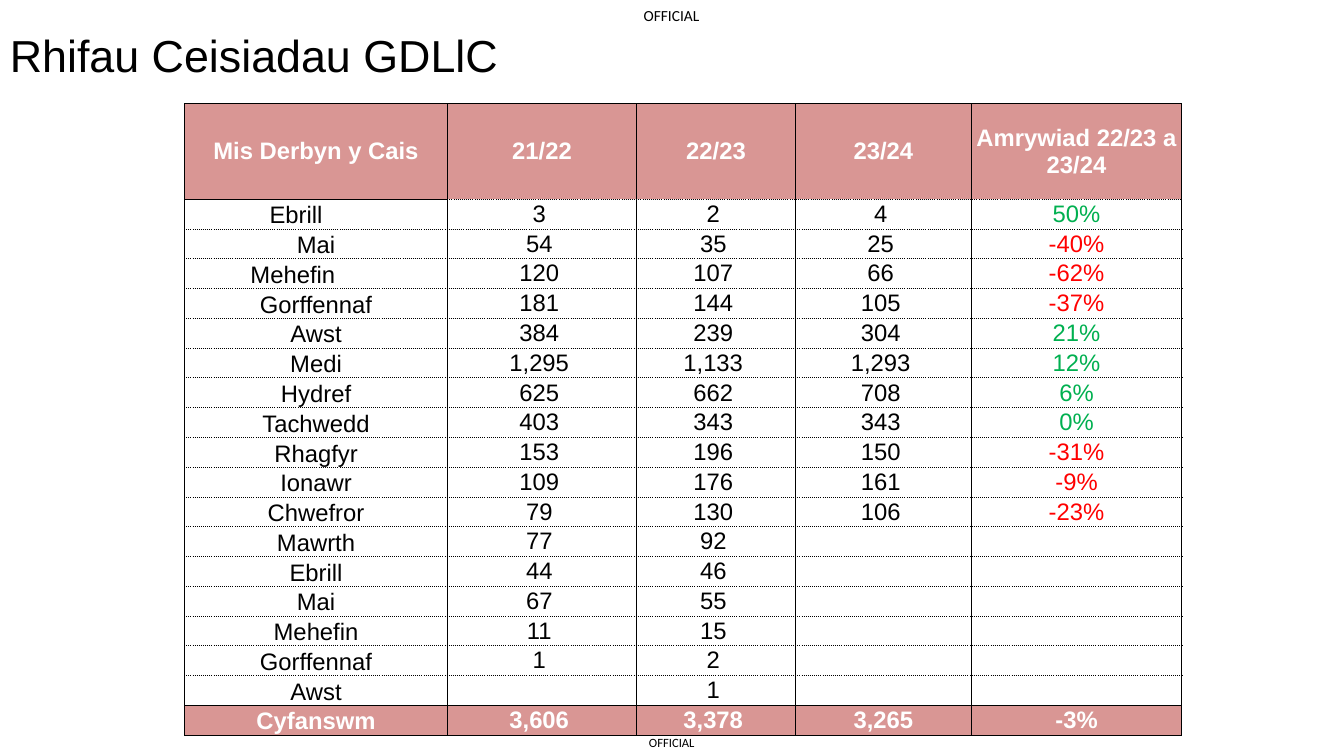
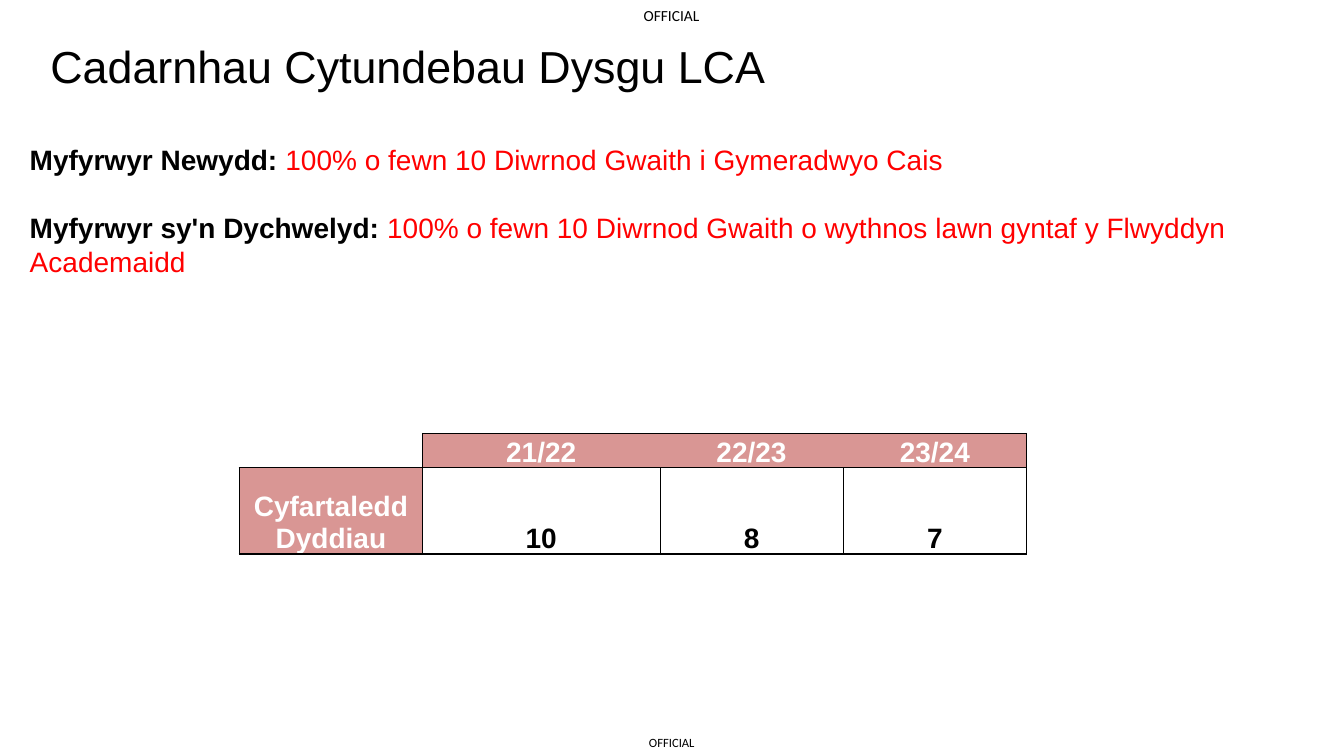
from dataclasses import dataclass, field

from lxml import etree
from pptx import Presentation
from pptx.dml.color import RGBColor
from pptx.enum import text
from pptx.oxml import ns
from pptx.util import Cm, Pt

COLOURS = {
    "black": "000000",
    "white": "FFFFFF",
    "rose": "D99694",
    "green": "00B050",
    "red": "FF0000",
}
BODY_FACE, MARKING_FACE = "Arial", "Calibri"
CENTRE, LEFT = text.PP_ALIGN.CENTER, text.PP_ALIGN.LEFT
MIDDLE, TOP, BOTTOM = (
    text.MSO_ANCHOR.MIDDLE, text.MSO_ANCHOR.TOP, text.MSO_ANCHOR.BOTTOM)
NUMBER_GAP = 0.17


@dataclass(frozen=True)
class Edge:
    width: float
    dash: str = "solid"


@dataclass(frozen=True)
class Span:
    words: str
    colour: str = "black"
    bold: bool = False


@dataclass(frozen=True)
class Cell:
    words: str = ""
    colour: str = "black"
    bold: bool = False
    fill: str = ""
    anchor: text.MSO_ANCHOR = MIDDLE
    right: float = 0.03
    edges: dict[str, Edge] = field(default_factory=dict)


@dataclass(frozen=True)
class Marking:
    left: float
    top: float
    width: float
    height: float
    size: int


MARKINGS = (
    Marking(16, 18.36, 1.86, 0.69, 9),
    Marking(15.82, 0, 2.21, 0.79, 11),
)

THIN, DOTTED, FIRM = Edge(0.5), Edge(0.5, "dot"), Edge(1)

YEARS = ("21/22", "22/23", "23/24")
MONTHS = (
    ("Ebrill", "3", "2", "4", "50%"),
    ("Mai", "54", "35", "25", "-40%"),
    ("Mehefin", "120", "107", "66", "-62%"),
    ("Gorffennaf", "181", "144", "105", "-37%"),
    ("Awst", "384", "239", "304", "21%"),
    ("Medi", "1,295", "1,133", "1,293", "12%"),
    ("Hydref", "625", "662", "708", "6%"),
    ("Tachwedd", "403", "343", "343", "0%"),
    ("Rhagfyr", "153", "196", "150", "-31%"),
    ("Ionawr", "109", "176", "161", "-9%"),
    ("Chwefror", "79", "130", "106", "-23%"),
    ("Mawrth", "77", "92", "", ""),
    ("Ebrill", "44", "46", "", ""),
    ("Mai", "67", "55", "", ""),
    ("Mehefin", "11", "15", "", ""),
    ("Gorffennaf", "1", "2", "", ""),
    ("Awst", "", "1", "", ""),
)
TOTALS = ("Cyfanswm", "3,606", "3,378", "3,265", "-3%")
MONTH_GAPS = {0: 1.04, 2: 1.2}


def rgb(name: str) -> RGBColor:
    return RGBColor.from_string(COLOURS[name])


def add_text(page, left: float, top: float, width: float, height: float,
             paras: list[list[Span]], size: float, face: str = BODY_FACE,
             align: text.PP_ALIGN = LEFT, anchor: text.MSO_ANCHOR = TOP,
             inset: bool = True, gap: float = 0) -> None:
    """Place paragraphs of spans, with a gap in points between paragraphs."""
    box = page.shapes.add_textbox(Cm(left), Cm(top), Cm(width), Cm(height))
    frame = box.text_frame
    frame.word_wrap = True
    frame.vertical_anchor = anchor
    if not inset:
        frame.margin_left = frame.margin_right = Cm(0)
        frame.margin_top = frame.margin_bottom = Cm(0)
    for index, spans in enumerate(paras):
        para = frame.add_paragraph() if index else frame.paragraphs[0]
        para.alignment = align
        if index:
            para.space_before = Pt(gap)
        para.font.size = Pt(size)
        para.font.name = face
        for span in spans:
            run = para.add_run()
            run.text = span.words
            run.font.bold = span.bold
            run.font.color.rgb = rgb(span.colour)


def add_page(deck, title: str, left: float, top: float):
    """Add a blank page with its security markings and title."""
    page = deck.slides.add_slide(deck.slide_layouts[6])
    for mark in MARKINGS:
        add_text(page, mark.left, mark.top, mark.width, mark.height,
                 [[Span("OFFICIAL")]], mark.size, MARKING_FACE,
                 CENTRE, MIDDLE, inset=False)
    add_text(page, left, top, 28, 1.63, [[Span(title)]], 32)
    return page


def draw_edges(cell, edges: dict[str, Edge]) -> None:
    properties = cell._tc.get_or_add_tcPr()
    for side in "LRTB":
        edge = edges.get(side)
        line = etree.SubElement(properties, ns.qn(f"a:ln{side}"))
        if edge is None:
            etree.SubElement(line, ns.qn("a:noFill"))
            continue
        line.set("w", str(Pt(edge.width)))
        paint = etree.SubElement(line, ns.qn("a:solidFill"))
        etree.SubElement(paint, ns.qn("a:srgbClr"), val=COLOURS["black"])
        etree.SubElement(line, ns.qn("a:prstDash"), val=edge.dash)


def fill_cell(target, cell: Cell, size: float) -> None:
    draw_edges(target, cell.edges)
    if cell.fill:
        target.fill.solid()
        target.fill.fore_color.rgb = rgb(cell.fill)
    else:
        target.fill.background()
    target.vertical_anchor = cell.anchor
    target.margin_left, target.margin_right = Cm(0.03), Cm(cell.right)
    target.margin_top = target.margin_bottom = Cm(0)
    para = target.text_frame.paragraphs[0]
    if cell.words:
        para.add_run().text = cell.words
    para.alignment = CENTRE
    para.font.size = Pt(size)
    para.font.name = BODY_FACE
    para.font.bold = cell.bold
    para.font.color.rgb = rgb(cell.colour)


def add_grid(page, left: float, top: float, widths: list[float],
             heights: list[float], rows: list[list[Cell]], size: float) -> None:
    table = page.shapes.add_table(
        len(heights), len(widths), Cm(left), Cm(top),
        Cm(sum(widths)), Cm(sum(heights))).table
    table.first_row = table.horz_banding = False
    for column, width in zip(table.columns, widths):
        column.width = Cm(width)
    for row, height, cells in zip(table.rows, heights, rows):
        row.height = Cm(height)
        for target, cell in zip(row.cells, cells):
            fill_cell(target, cell, size)


def edges(top: Edge, bottom: Edge, sides: Edge = THIN) -> dict[str, Edge]:
    return {"L": sides, "R": sides, "T": top, "B": bottom}


def heading(words: str, borders: dict[str, Edge],
            anchor: text.MSO_ANCHOR = MIDDLE, right: float = 0.03) -> Cell:
    return Cell(words, "white", True, "rose", anchor, right, borders)


def month_row(index: int) -> list[Cell]:
    name, *counts, change = MONTHS[index]
    first, last = index == 0, index == len(MONTHS) - 1
    bottom = THIN if last else DOTTED
    borders = edges(DOTTED, bottom)
    name_cell = Cell(name, anchor=BOTTOM, right=MONTH_GAPS.get(index, 0.03),
                     edges=edges(THIN if first else DOTTED, bottom))
    count_cells = [Cell(count, right=NUMBER_GAP, edges=borders)
                   for count in counts]
    colour = "red" if change.startswith("-") else "green"
    return [name_cell, *count_cells, Cell(change, colour, edges=borders)]


def add_applications(deck) -> None:
    page = add_page(deck, "Rhifau Ceisiadau GDLlC", 0, 0.58)
    titles = ("Mis Derbyn y Cais", *YEARS, "Amrywiad 22/23 a 23/24")
    header = [heading(words, edges(THIN, DOTTED if column else THIN))
              for column, words in enumerate(titles)]
    totals = [heading(words, edges(THIN, THIN), MIDDLE if column else BOTTOM,
                      NUMBER_GAP if column in (1, 2) else 0.03)
              for column, words in enumerate(TOTALS)]
    months = [month_row(index) for index in range(len(MONTHS))]
    add_grid(page, 4.65, 2.61, [6.63, 4.76, 4.01, 4.43, 5.3],
             [2.41] + [0.75] * (len(MONTHS) + 1),
             [header, *months, totals], 17)


def add_agreements(deck) -> None:
    page = add_page(deck, "Cadarnhau Cytundebau Dysgu LCA", 1.02, 0.84)
    targets = [
        ("Myfyrwyr Newydd: ",
         "100% o fewn 10 Diwrnod Gwaith i Gymeradwyo Cais"),
        ("Myfyrwyr sy'n Dychwelyd: ",
         "100% o fewn 10 Diwrnod Gwaith o wythnos lawn gyntaf "
         "y Flwyddyn Academaidd"),
    ]
    add_text(page, 0.5, 3.46, 32.54, 6.1,
             [[Span(group, bold=True), Span(target, "red")]
              for group, target in targets], 20, gap=25)

    header = [Cell(edges={"R": FIRM, "B": FIRM})]
    averages = [heading("Cyfartaledd Dyddiau", edges(FIRM, FIRM, FIRM), BOTTOM)]
    days = ("10", "8", "7")
    for index, (year, average) in enumerate(zip(YEARS, days)):
        left = FIRM if index == 0 else None
        right = FIRM if index == len(YEARS) - 1 else None
        ends = {"T": FIRM, "B": FIRM}
        header.append(heading(year, ends | {"L": left, "R": right}, BOTTOM))
        averages.append(Cell(
            average, bold=True, anchor=BOTTOM,
            edges=ends | {"L": left or THIN, "R": right or THIN}))
    add_grid(page, 6.03, 10.92, [4.62, 5.98, 4.62, 4.62], [0.87, 2.17],
             [header, averages], 20)


def main() -> None:
    deck = Presentation()
    deck.slide_width, deck.slide_height = Cm(33.87), Cm(19.05)
    add_applications(deck)
    add_agreements(deck)
    deck.save("out.pptx")


if __name__ == "__main__":
    main()
